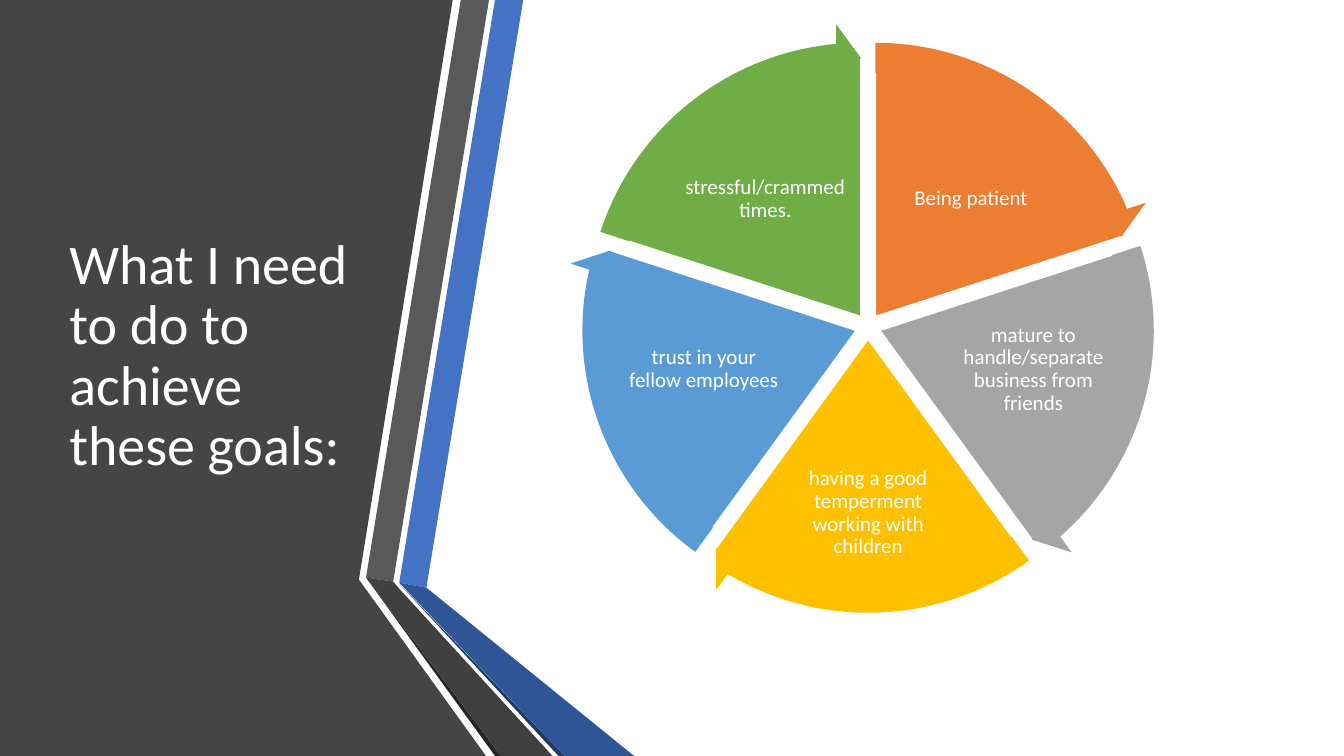
from dataclasses import dataclass
from math import cos, radians, sin

from pptx import Presentation
from pptx.dml.color import RGBColor
from pptx.enum.shapes import MSO_SHAPE as Shape
from pptx.enum.text import MSO_ANCHOR as Anchor, PP_ALIGN as Align
from pptx.util import Inches, Pt


@dataclass(frozen=True)
class Theme:
    font: str = "Calibri"
    title_size: int = 40
    label_size: int = 15
    line_spacing: float = 0.9
    white: str = "FFFFFF"
    panel: str = "454545"
    gray: str = "595959"
    gray_fold: str = "404040"
    gray_edge: str = "262626"
    blue: str = "4472C4"
    blue_fold: str = "2F5597"
    blue_edge: str = "203864"
    wedges: tuple = ("ED7D31", "A5A5A5", "FFC000", "5B9BD5", "70AD47")


class SlideBuilder:
    def __init__(self, slide, theme):
        self.shapes = slide.shapes
        self.theme = theme

    def paint(self, shape, color, outline=None):
        shape.shadow.inherit = False
        shape.fill.solid()
        shape.fill.fore_color.rgb = RGBColor.from_string(color)
        if outline:
            shape.line.color.rgb = RGBColor.from_string(outline)
            shape.line.width = Pt(1)
        else:
            shape.line.fill.background()

    def polygon(self, points, color):
        corners = [(Inches(x), Inches(y)) for x, y in points]
        outline = self.shapes.build_freeform(*corners[0], scale=1.0)
        outline.add_line_segments(corners[1:], close=True)
        self.paint(outline.convert_to_shape(), color)

    def round_shape(self, kind, center, size, adjustments, color, outline=None):
        """Draw a preset in a square box around center; angles are in units of 5/3 degree."""
        left, top = (Inches(middle - size / 2) for middle in center)
        shape = self.shapes.add_shape(kind, left, top, Inches(size), Inches(size))
        for index, value in enumerate(adjustments):
            shape.adjustments[index] = value
        self.paint(shape, color, outline)

    def text(self, wording, bounds, size, align=Align.LEFT, inset=(0.1, 0.05)):
        box = self.shapes.add_textbox(*(Inches(length) for length in bounds))
        frame = box.text_frame
        frame.word_wrap = True
        frame.vertical_anchor = Anchor.MIDDLE
        frame.margin_left = frame.margin_right = Inches(inset[0])
        frame.margin_top = frame.margin_bottom = Inches(inset[1])
        frame.text = wording
        para = frame.paragraphs[0]
        para.alignment = align
        para.line_spacing = self.theme.line_spacing
        for span in para.runs:
            span.font.name = self.theme.font
            span.font.size = Pt(size)
            span.font.color.rgb = RGBColor.from_string(self.theme.white)


FULL_TURN = 216
HUB = (8.61, 3.24)
HUB_GAP = 0.124
PIE_SIZE = 5.18
ARROW_SIZE = 5.82
ARROW_THICKNESS, ARROW_HEAD_ANGLE, ARROW_HEAD_WIDTH = 0.051, 3.275, 0.059

LABELS = [
    ("Being patient", (8.8, 1.42, 1.66, 1.11)),
    ("mature to handle/separate business from friends", (9.48, 3.05, 1.54, 1.23)),
    ("having a good temperment working with children", (7.87, 4.41, 1.48, 1.36)),
    ("trust in your fellow employees", (6.21, 3.05, 1.54, 1.23)),
    ("stressful/crammed times.", (6.76, 1.42, 1.66, 1.11)),
]


def draw_ribbons(builder):
    theme = builder.theme
    ribbons = [
        (theme.panel, [(0, 0), (4.49, 0), (3.56, 5.75), (4.82, 7.5), (0, 7.5)]),
        (theme.blue, [(3.96, 5.78), (4.23, 5.83), (5.19, 0), (4.91, 0)]),
        (theme.gray, [(4.85, 0), (4.57, 0), (3.63, 5.73), (3.9, 5.77)]),
        (theme.gray_edge, [(3.63, 5.73), (4.91, 7.5), (4.97, 7.5)]),
        (theme.blue_edge, [(3.96, 5.79), (5.54, 7.5), (5.6, 7.5)]),
        (theme.blue_fold, [(3.96, 5.78), (5.6, 7.5), (6.29, 7.5), (4.23, 5.83)]),
        (theme.gray_fold, [(5.48, 7.5), (3.95, 5.83), (3.9, 5.77), (3.63, 5.73), (4.97, 7.5)]),
    ]
    for color, points in ribbons:
        builder.polygon(points, color)


def draw_cycle(builder):
    theme = builder.theme
    sweep = FULL_TURN / len(LABELS)
    arrows = []
    for index, (color, (wording, bounds)) in enumerate(zip(theme.wedges, LABELS)):
        start = (FULL_TURN * 3 / 4 + index * sweep) % FULL_TURN
        end = (start + sweep) % FULL_TURN
        middle = radians((start + sweep / 2) * 360 / FULL_TURN)
        center = (HUB[0] + HUB_GAP * cos(middle), HUB[1] + HUB_GAP * sin(middle))
        builder.round_shape(Shape.PIE, center, PIE_SIZE, (start, end), color, theme.white)
        builder.text(wording, bounds, theme.label_size, Align.CENTER, (0.02, 0.02))
        turn = (ARROW_THICKNESS, ARROW_HEAD_ANGLE, end - ARROW_HEAD_ANGLE, start, ARROW_HEAD_WIDTH)
        arrows.append((center, turn, color))
    for center, turn, color in arrows:
        builder.round_shape(Shape.CIRCULAR_ARROW, center, ARROW_SIZE, turn, color)


def main():
    deck = Presentation()
    deck.slide_width, deck.slide_height = Inches(13.33), Inches(7.5)
    page = deck.slides.add_slide(deck.slide_layouts[6])
    builder = SlideBuilder(page, Theme())
    draw_ribbons(builder)
    builder.text("What I need to do to achieve these goals:",
                 (0.59, 0.75, 3.04, 5.58), builder.theme.title_size)
    draw_cycle(builder)
    deck.save("out.pptx")


if __name__ == "__main__":
    main()
